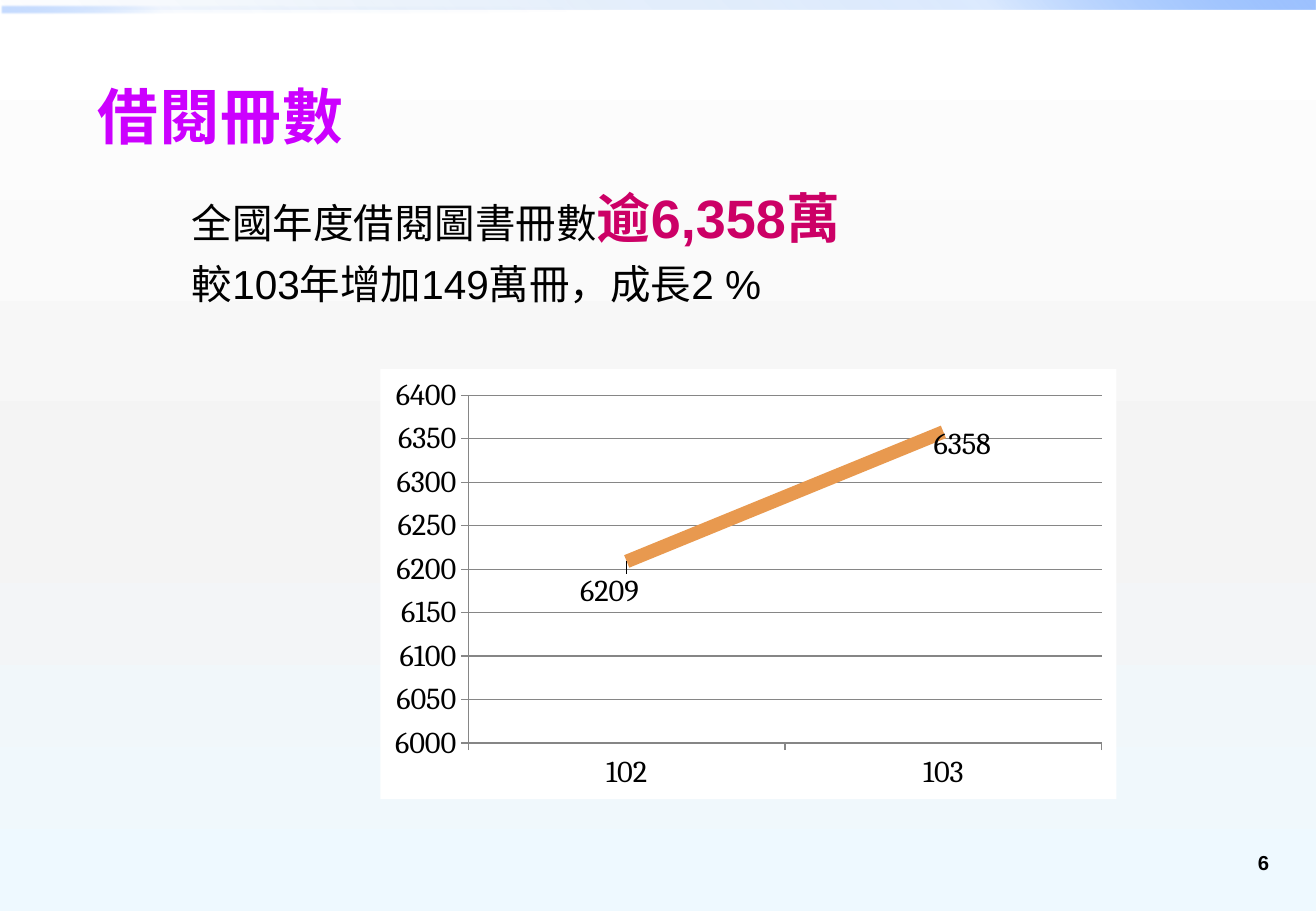
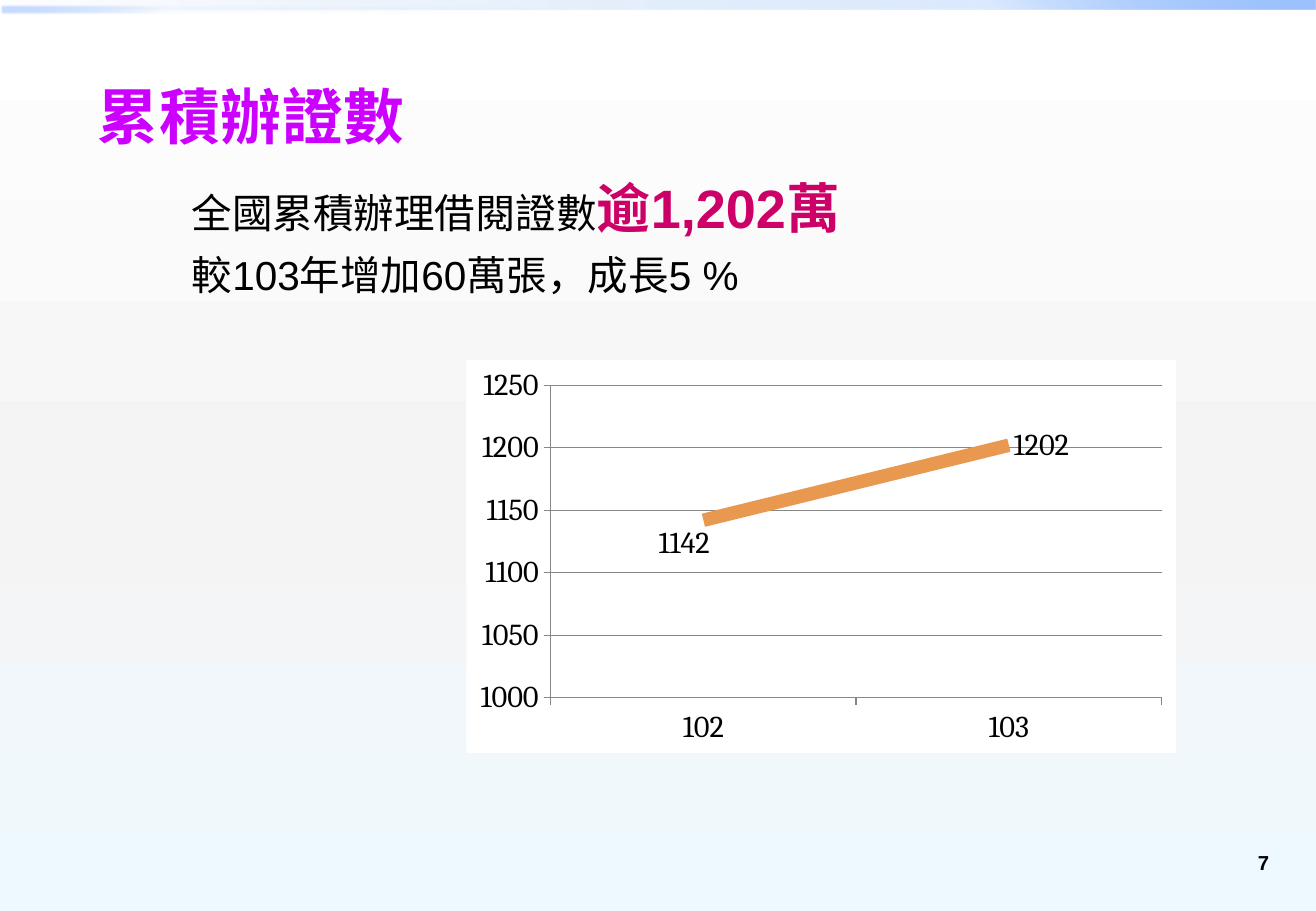
from lxml import etree
from pptx import Presentation
from pptx.chart.data import CategoryChartData
from pptx.dml.color import RGBColor
from pptx.enum.chart import XL_CHART_TYPE, XL_LABEL_POSITION, XL_TICK_MARK
from pptx.enum.shapes import MSO_SHAPE
from pptx.enum.text import PP_ALIGN
from pptx.oxml import parse_xml
from pptx.oxml.ns import qn
from pptx.util import Cm, Pt

RECTANGLE = MSO_SHAPE.RECTANGLE
LEFT, CENTER, RIGHT = PP_ALIGN.LEFT, PP_ALIGN.CENTER, PP_ALIGN.RIGHT
LABEL_RIGHT = XL_LABEL_POSITION.RIGHT
TICK_OUTSIDE = XL_TICK_MARK.OUTSIDE
LINE, LINE_STACKED = XL_CHART_TYPE.LINE, XL_CHART_TYPE.LINE_STACKED

TEXT_FONT, CHART_FONT = "Arial", "Cambria"
BLACK, WHITE, PURPLE, CRIMSON = "000000", "FFFFFF", "CC00FF", "CC0066"
ORANGE, GRAY = "E8994F", "868686"
WIDTH, HEIGHT = 27.51, 19.05

BACKGROUND = [(0, "FFFFFF", 100), (55, "F4F4F4", 100), (100, "EEF9FF", 100)]
BANDS = [
    {"box": (0, 0, WIDTH, 0.2), "angle": 315, "soft": False,
     "stops": [(0, "0058B7", 0), (75, "4F95FF", 20), (100, "9EC2FF", 100)]},
    {"box": (0, 0.1, WIDTH / 2, 0.2), "angle": 135, "soft": True,
     "stops": [(0, "0058B7", 0), (75, "4F95FF", 5), (100, "9EC2FF", 60)]},
]
YEARS = ["102", "103"]
PAGES = [
    {"number": "6", "title": "借閱冊數", "title_width": 5.72, "body_top": 3.73,
     "lead": "全國年度借閱圖書冊數", "total": "逾6,358萬",
     "growth": "較103年增加149萬冊，成長2 %",
     "chart": LINE_STACKED, "chart_box": (7.95, 7.72, 15.39, 8.99),
     "values": [6209, 6358], "scale": (6000, 6400),
     "label_shifts": [(-0.07, 0.07), (-0.02, 0.03)]},
    {"number": "7", "title": "累積辦證數", "title_width": 7.01, "body_top": 3.53,
     "lead": "全國累積辦理借閱證數", "total": "逾1,202萬",
     "growth": "較103年增加60萬張，成長5 %",
     "chart": LINE, "chart_box": (9.75, 7.52, 14.83, 8.23),
     "values": [1142, 1202], "scale": (1000, 1250),
     "label_shifts": [(-0.07, 0.06), (0, 0)]},
]
NAMESPACES = (
    'xmlns:a="http://schemas.openxmlformats.org/drawingml/2006/main" '
    'xmlns:c="http://schemas.openxmlformats.org/drawingml/2006/chart"'
)


def color(value):
    return RGBColor.from_string(value)


def gradient(stops, angle):
    marks = "".join(
        f'<a:gs pos="{position * 1000}"><a:srgbClr val="{value}">'
        f'<a:alpha val="{opacity * 1000}"/></a:srgbClr></a:gs>'
        for position, value, opacity in stops
    )
    return parse_xml(
        f'<a:gradFill {NAMESPACES} rotWithShape="1"><a:gsLst>{marks}</a:gsLst>'
        f'<a:lin ang="{angle * 60000}" scaled="0"/></a:gradFill>'
    )


def replace_solid(parent, stops, angle):
    solid = parent.find(".//" + qn("a:solidFill"))
    solid.getparent().replace(solid, gradient(stops, angle))


def add_band(page, band):
    shape = page.shapes.add_shape(RECTANGLE, *map(Cm, band["box"]))
    shape.shadow.inherit = False
    shape.line.fill.background()
    shape.fill.solid()
    shape.fill.fore_color.rgb = color(WHITE)
    replace_solid(shape.element.spPr, band["stops"], band["angle"])
    if band["soft"]:
        effects = shape.element.spPr.find(qn("a:effectLst"))
        etree.SubElement(effects, qn("a:softEdge"), rad="12700")


def add_text(page, place, paragraphs, align=LEFT, wrap=True, space_after=0):
    box = page.shapes.add_textbox(*map(Cm, place))
    frame = box.text_frame
    frame.word_wrap = wrap
    for index, spans in enumerate(paragraphs):
        para = frame.paragraphs[0] if index == 0 else frame.add_paragraph()
        para.alignment = align
        para.space_after = Pt(space_after)
        for text, size, value, bold in spans:
            span = para.add_run()
            span.text = text
            span.font.name = TEXT_FONT
            span.font.size = Pt(size)
            span.font.bold = bold
            span.font.color.rgb = color(value)
    return frame


def style_axis(axis):
    axis.major_tick_mark = TICK_OUTSIDE
    axis.minor_tick_mark = XL_TICK_MARK.NONE
    axis.format.line.color.rgb = color(GRAY)
    axis.format.line.width = Pt(0.75)


def add_line_chart(page, content):
    data = CategoryChartData()
    data.categories = YEARS
    data.add_series("Series 1", content["values"])
    frame = page.shapes.add_chart(content["chart"], *map(Cm, content["chart_box"]), data)
    chart = frame.chart
    chart.has_legend = False
    chart.has_title = False
    chart.font.name = CHART_FONT
    chart.font.size = Pt(18)
    chart.font.color.rgb = color(BLACK)
    chart.element.find(qn("c:chart")).addnext(parse_xml(
        f'<c:spPr {NAMESPACES}><a:solidFill><a:srgbClr val="{WHITE}"/></a:solidFill>'
        '<a:ln><a:noFill/></a:ln></c:spPr>'
    ))

    style_axis(chart.category_axis)
    value_axis = chart.value_axis
    style_axis(value_axis)
    value_axis.minimum_scale, value_axis.maximum_scale = content["scale"]
    value_axis.major_unit = 50
    grid_line = value_axis.major_gridlines.format.line
    grid_line.color.rgb = color(GRAY)
    grid_line.width = Pt(0.75)

    plot = chart.plots[0]
    plot.vary_by_categories = False
    series = plot.series[0]
    series.smooth = False
    series.format.line.color.rgb = color(ORANGE)
    series.format.line.width = Pt(8)
    series.data_labels.show_value = True
    series.data_labels.position = LABEL_RIGHT
    for index in range(len(YEARS)):
        series.points[index].data_label.position = LABEL_RIGHT
    labels = chart.element.iter(qn("c:dLbl"))
    for label, (across, down) in zip(labels, content["label_shifts"]):
        label.insert(1, parse_xml(
            f'<c:layout {NAMESPACES}><c:manualLayout><c:x val="{across}"/>'
            f'<c:y val="{down}"/></c:manualLayout></c:layout>'
        ))


def add_page(deck, content):
    page = deck.slides.add_slide(deck.slide_layouts[6])
    for band in BANDS:
        add_band(page, band)
    add_text(page, (20.35, 17.65, 6.43, 1.02),
             [[(content["number"], 12, BLACK, True)]], align=RIGHT)
    title = add_text(page, (1.75, 1.52, content["title_width"], 1.8),
                     [[(content["title"], 36, PURPLE, True)]], align=CENTER, wrap=False)
    title.paragraphs[0].runs[0].font._element.set("spc", "50")
    add_text(page, (3.76, content["body_top"], 14.07, 2.87), [
        [(content["lead"], 24, BLACK, False), (content["total"], 32, CRIMSON, True)],
        [(content["growth"], 24, BLACK, False)],
    ], space_after=6)
    add_line_chart(page, content)


def main():
    deck = Presentation()
    deck.slide_width, deck.slide_height = Cm(WIDTH), Cm(HEIGHT)
    master = deck.slide_master
    master.background.fill.solid()
    master.background.fill.fore_color.rgb = color(WHITE)
    replace_solid(master.element.cSld.find(qn("p:bg")), BACKGROUND, 90)
    for content in PAGES:
        add_page(deck, content)
    deck.save("out.pptx")


if __name__ == "__main__":
    main()
